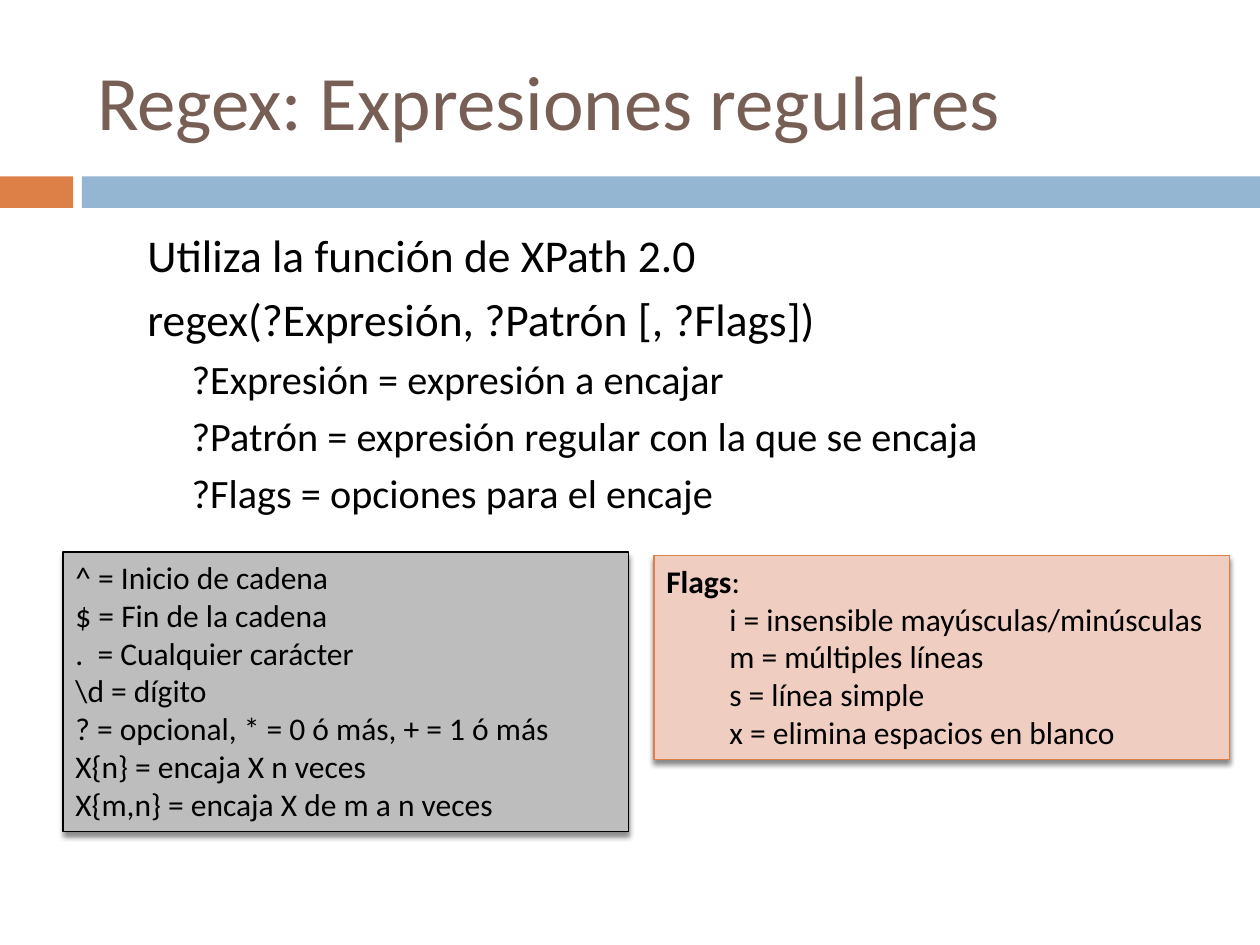
from lxml import etree
from pptx import Presentation
from pptx import util as u
from pptx.dml.color import RGBColor
from pptx.enum import shapes, text
from pptx.oxml import parse_xml
from pptx.oxml.ns import nsdecls, qn

BLACK, BROWN, ORANGE, BLUE = "000000", "775F55", "DD8047", "94B6D2"
GREY, PINK = "BDBDBD", "EFCDC1"

SHADOW = f"""<a:effectLst {nsdecls('a')}>
  <a:outerShdw blurRad="{u.Pt(3)}" dist="{u.Pt(2.4)}" dir="5400000" rotWithShape="0">
    <a:srgbClr val="{BLACK}"><a:alpha val="45000"/></a:srgbClr>
  </a:outerShdw>
</a:effectLst>"""

FUNCTION_LINES = [
    (1, "Utiliza la función de XPath 2.0"),
    (1, "regex(?Expresión, ?Patrón [, ?Flags])"),
    (2, "?Expresión = expresión a encajar"),
    (2, "?Patrón = expresión regular con la que se encaja"),
    (2, "?Flags = opciones para el encaje"),
]
PATTERN_LINES = [
    "^ = Inicio de cadena",
    "$ = Fin de la cadena",
    ".  = Cualquier carácter",
    "\\d = dígito",
    "? = opcional, * = 0 ó más, + = 1 ó más",
    "X{n} = encaja X n veces",
    "X{m,n} = encaja X de m a n veces",
]
FLAG_LINES = [
    "Flags:",
    "i = insensible mayúsculas/minúsculas",
    "m = múltiples líneas",
    "s = línea simple",
    "x = elimina espacios en blanco",
]


def color(value):
    return RGBColor.from_string(value)


def set_indent(paragraph, left, first=0):
    properties = paragraph._p.get_or_add_pPr()
    properties.set("marL", str(u.Inches(left)))
    properties.set("indent", str(u.Inches(first)))


class SlideBuilder:
    font = "Calibri"
    # level: (text size, left indent, first-line indent, space before)
    levels = {1: (26, 0.7, -0.3, 5.5), 2: (23, 1, -0.25, 5)}

    def __init__(self, slide):
        self.slide = slide

    def place(self, shape, left, top, width, height):
        shape.left, shape.top = u.Inches(left), u.Inches(top)
        shape.width, shape.height = u.Inches(width), u.Inches(height)

    def format_runs(self, paragraph, size, font_color=BLACK):
        for run in paragraph.runs:
            run.font.name = self.font
            run.font.size = u.Pt(size)
            run.font.color.rgb = color(font_color)

    def title(self, wording, *box):
        shape = self.slide.shapes.title
        self.place(shape, *box)
        frame = shape.text_frame
        frame.text = wording
        frame.vertical_anchor = text.MSO_ANCHOR.MIDDLE
        frame.paragraphs[0].alignment = text.PP_ALIGN.LEFT
        self.format_runs(frame.paragraphs[0], 44, BROWN)

    def body(self, lines, *box):
        shape = self.slide.placeholders[1]
        self.place(shape, *box)
        frame = shape.text_frame
        frame.text = "\n".join(wording for _, wording in lines)
        for paragraph, (level, _) in zip(frame.paragraphs, lines):
            size, left, first, space = self.levels[level]
            paragraph.level = level
            paragraph.space_before = u.Pt(space)
            set_indent(paragraph, left, first)
            etree.SubElement(paragraph._p.get_or_add_pPr(), qn("a:buNone"))
            self.format_runs(paragraph, size)

    def bar(self, fill, *box):
        shape = self.slide.shapes.add_shape(
            shapes.MSO_SHAPE.RECTANGLE, *map(u.Inches, box))
        shape.shadow.inherit = False
        shape.fill.solid()
        shape.fill.fore_color.rgb = color(fill)
        shape.line.fill.background()
        return shape

    def note(self, lines, fill, line, *box):
        """Add a shadowed box of left-aligned lines and return its paragraphs."""
        shape = self.bar(fill, *box)
        shape.line.color.rgb = color(line)
        shape.line.width = u.Pt(0.79)
        properties = shape._element.spPr
        properties.replace(properties.find(qn("a:effectLst")), parse_xml(SHADOW))
        frame = shape.text_frame
        frame.word_wrap = True
        frame.auto_size = text.MSO_AUTO_SIZE.SHAPE_TO_FIT_TEXT
        frame.vertical_anchor = text.MSO_ANCHOR.TOP
        frame.text = "\n".join(lines)
        for paragraph in frame.paragraphs:
            paragraph.alignment = text.PP_ALIGN.LEFT
            self.format_runs(paragraph, 18)
        return frame.paragraphs


def main():
    presentation = Presentation()
    presentation.slide_width = u.Inches(10)
    presentation.slide_height = u.Inches(7.5)
    builder = SlideBuilder(
        presentation.slides.add_slide(presentation.slide_layouts[1]))

    builder.bar(ORANGE, 0, 1.4, 0.58, 0.25)
    builder.bar(BLUE, 0.65, 1.4, 9.35, 0.25)
    builder.title("Regex: Expresiones regulares", 0.67, 0.25, 8.92, 1.08)
    builder.body(FUNCTION_LINES, 0.67, 1.75, 8.92, 4.92)
    builder.note(PATTERN_LINES, GREY, BLACK, 0.5, 4.38, 4.49, 2.22)

    heading, *flags = builder.note(
        FLAG_LINES, PINK, ORANGE, 5.19, 4.41, 4.57, 1.62)
    heading.runs[0].text = "Flags"
    heading.runs[0].font.bold = True
    heading.add_run().text = ":"
    builder.format_runs(heading, 18)
    for paragraph in flags:
        paragraph.level = 1
        set_indent(paragraph, 0.5)

    presentation.save("out.pptx")


if __name__ == "__main__":
    main()
